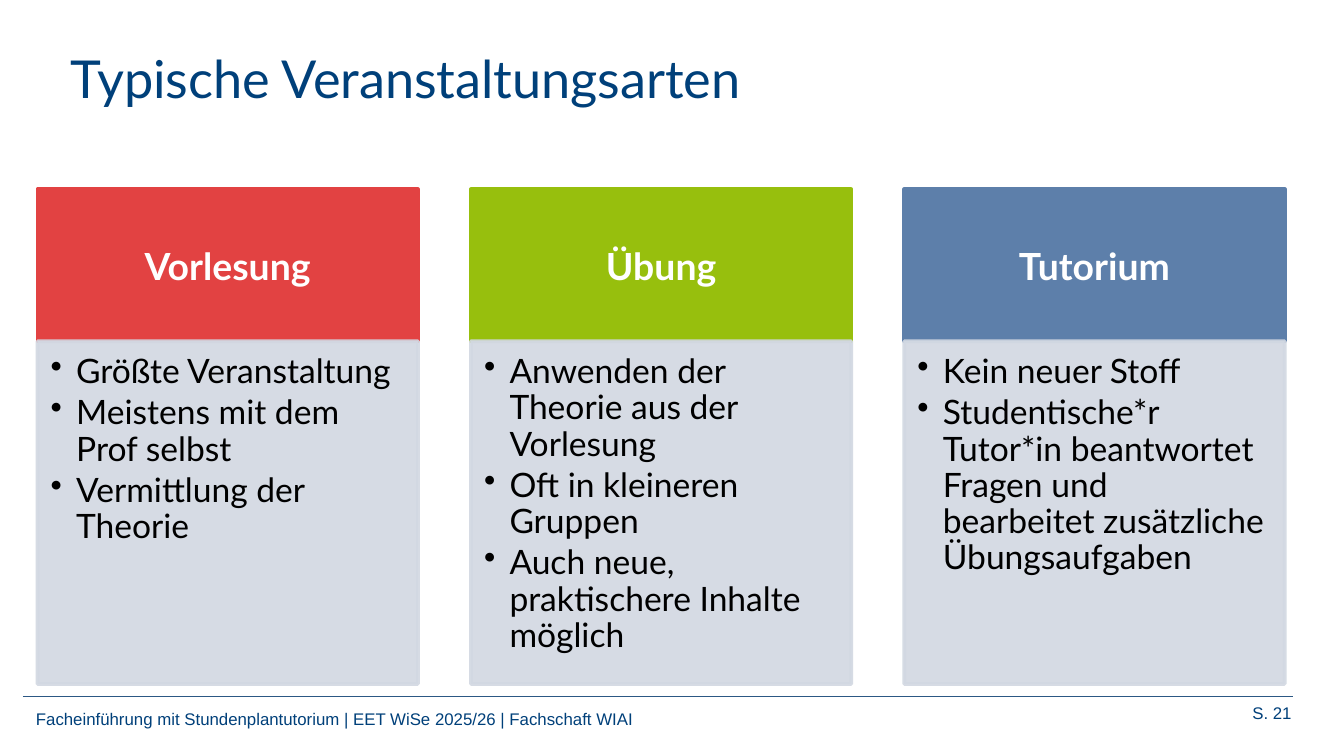
from lxml import etree
from pptx import Presentation, util as u
from pptx.dml import color
from pptx.enum import shapes, text
from pptx.oxml import ns

NAVY, GREY = "00407A", "D2D8E2"
LEFT, STEP, WIDTH = 0.71, 8.19, 7.19
TOP, HEAD, BODY = 3.58, 2.87, 6.48
CARDS = [
    ("Vorlesung", "E24242", [
        "Größte Veranstaltung",
        "Meistens mit dem Prof selbst",
        "Vermittlung der Theorie"]),
    ("Übung", "97BF0D", [
        "Anwenden der Theorie aus der Vorlesung",
        "Oft in kleineren Gruppen",
        "Auch neue, praktischere Inhalte möglich"]),
    ("Tutorium", "5D7FAA", [
        "Kein neuer Stoff",
        "Studentische*r Tutor*in beantwortet Fragen und "
        "bearbeitet zusätzliche Übungsaufgaben"]),
]


def rgb(code):
    return color.RGBColor.from_string(code)


def add(node, tag, **attrs):
    return etree.SubElement(node, ns.qn(tag), attrs)


class Deck:
    """Holds the text style and the current slide."""

    face = "Lato"

    def __init__(self):
        self.prs = Presentation()
        self.prs.slide_width = u.Cm(25.4)
        self.prs.slide_height = u.Cm(14.29)
        self.slide = self.prs.slides.add_slide(self.prs.slide_layouts[5])

    def fill_text(self, shape, words, size, ink, face=None, bold=False,
                  align=text.PP_ALIGN.LEFT, anchor=text.MSO_ANCHOR.TOP,
                  pads=(0.25, 0.13, 0.25, 0.13)):
        frame = shape.text_frame
        frame.text = words
        frame.word_wrap = True
        frame.auto_size = text.MSO_AUTO_SIZE.NONE
        frame.vertical_anchor = anchor
        (frame.margin_left, frame.margin_top,
         frame.margin_right, frame.margin_bottom) = map(u.Cm, pads)
        for para in frame.paragraphs:
            para.alignment = align
            for run in para.runs:
                run.font.name = face or self.face
                run.font.size = u.Pt(size)
                run.font.bold = bold
                run.font.color.rgb = rgb(ink)
        return frame

    def title(self, words, *box):
        shape = self.slide.shapes.title
        shape.left, shape.top, shape.width, shape.height = map(u.Cm, box)
        self.fill_text(shape, words, 28, NAVY)

    def label(self, words, *box, align=text.PP_ALIGN.LEFT):
        shape = self.slide.shapes.add_textbox(*map(u.Cm, box))
        self.fill_text(shape, words, 9, NAVY, face="Arial", align=align)

    def rule(self, x1, x2, y):
        line = self.slide.shapes.add_connector(
            shapes.MSO_CONNECTOR.STRAIGHT, *map(u.Cm, (x1, y, x2, y)))
        line.line.color.rgb = rgb("2C5884")
        line.line.width = u.Pt(0.75)
        add(line._element.spPr, "a:effectLst")

    def rect(self, fill, *box):
        shape = self.slide.shapes.add_shape(
            shapes.MSO_SHAPE.RECTANGLE, *map(u.Cm, box))
        shape.shadow.inherit = False
        shape.fill.solid()
        shape.fill.fore_color.rgb = rgb(fill)
        shape.line.color.rgb = rgb(fill)
        shape.line.width = u.Pt(2)
        return shape

    def head(self, words, fill, *box):
        self.fill_text(
            self.rect(fill, *box), words, 20, "FFFFFF", bold=True,
            align=text.PP_ALIGN.CENTER, anchor=text.MSO_ANCHOR.MIDDLE,
            pads=(0.4, 0.23, 0.4, 0.23))

    def body(self, items, *box):
        shape = self.rect(GREY, *box)
        for tint in shape._element.spPr.iter(ns.qn("a:srgbClr")):
            add(tint, "a:alpha", val="90000")
        frame = self.fill_text(shape, "\n".join(items), 18, "000000",
                               pads=(0.25, 0.25, 0.35, 0.4))
        for para in frame.paragraphs:
            props = para._p.get_or_add_pPr()
            props.set("marL", str(u.Cm(0.48)))
            props.set("indent", str(u.Cm(-0.48)))
            add(props, "a:buChar", char="•")
            para.line_spacing = 0.9
            para.space_after = u.Pt(2.7)


def main():
    deck = Deck()
    deck.label("Facheinführung mit Stundenplantutorium | EET WiSe 2025/26 | "
               "Fachschaft WIAI", 0.43, 13.26, 18.67, 0.48)
    deck.rule(0.43, 24.43, 13.16)
    deck.label("S. 21", 21.69, 13.16, 2.97, 0.64, align=text.PP_ALIGN.RIGHT)
    deck.title("Typische Veranstaltungsarten", 1.09, 0.74, 20.4, 2.39)
    for col, (name, fill, items) in enumerate(CARDS):
        left = LEFT + col * STEP
        deck.head(name, fill, left, TOP, WIDTH, HEAD)
        deck.body(items, left, TOP + HEAD, WIDTH, BODY)
    deck.prs.save("out.pptx")


if __name__ == "__main__":
    main()
